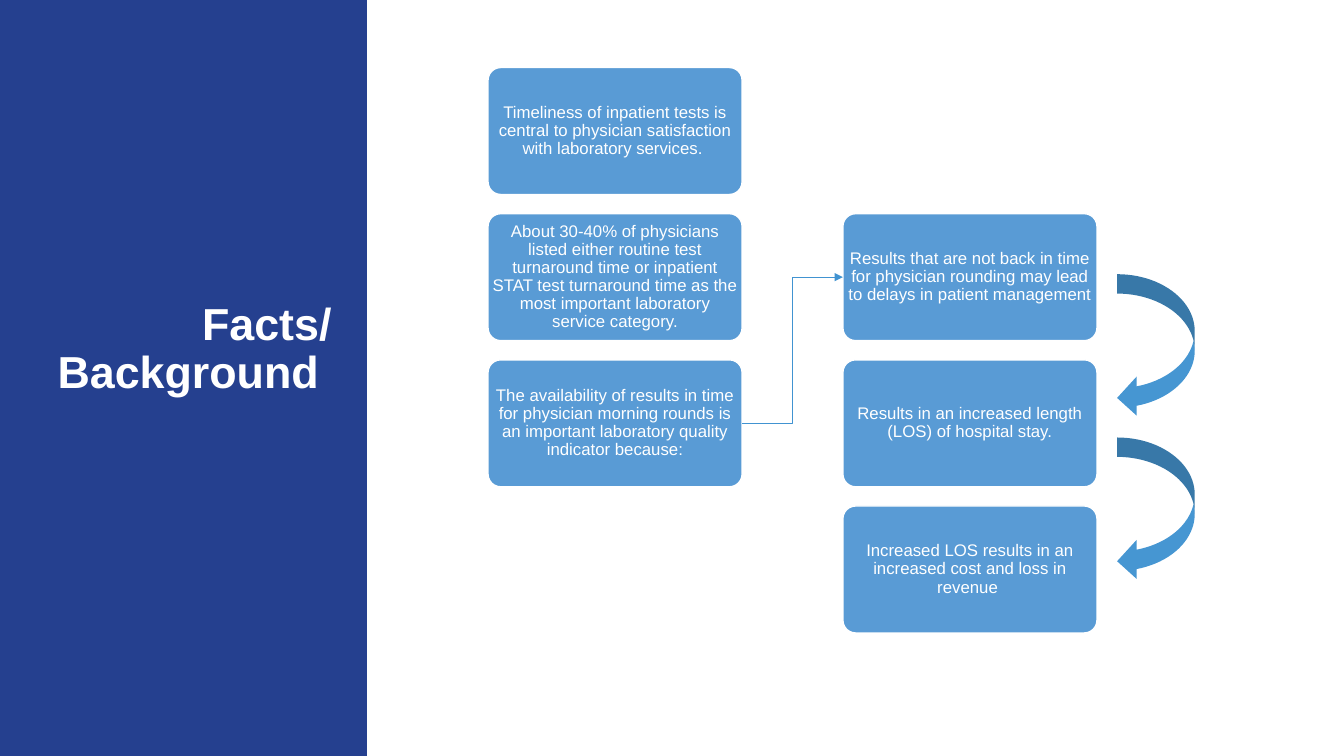
import pptx
import pptx.dml.color
import pptx.enum.shapes
import pptx.enum.text
import pptx.oxml
import pptx.util

SHAPE = pptx.enum.shapes.MSO_SHAPE
ALIGN = pptx.enum.text.PP_ALIGN
ANCHOR = pptx.enum.text.MSO_ANCHOR
Inches = pptx.util.Inches

PANEL, BOX, ARROW, LINK, WHITE = "25408F", "599BD5", "4696D2", "4193D1", "FFFFFF"
GRID_LEFT, GRID_TOP = 4.84, 0.67
COLUMN_STEP, ROW_STEP = 3.52, 1.45
BOX_WIDTH, BOX_HEIGHT = 2.52, 1.26
ARROW_LEFT, ARROW_TOP, ARROW_STEP = 11.08, 2.72, 1.62
RIGHT_SIDE, LEFT_SIDE = 3, 1

# (column, row) of the grid -> wording
FACTS = {
    (0, 0): "Timeliness of inpatient tests is central to physician satisfaction "
            "with laboratory services. ",
    (0, 1): "About 30-40% of physicians listed either routine test turnaround time or "
            "inpatient STAT test turnaround time as the most important laboratory "
            "service category.",
    (0, 2): "The availability of results in time for physician morning rounds is an "
            "important laboratory quality indicator because:",
    (1, 1): "Results that are not back in time for physician rounding may lead to "
            "delays in patient management ",
    (1, 2): "Results in an increased length (LOS) of hospital stay.",
    (1, 3): "Increased LOS results in an increased cost and loss in revenue ",
}


def color(hex_string):
    return pptx.dml.color.RGBColor.from_string(hex_string)


def apply(target, formats):
    """Set every attribute named in formats on target."""
    for name, value in formats.items():
        setattr(target, name, value)


def write(shape, text, size, align, inset, bold=False):
    """Fill a shape with one paragraph of white text, centred vertically."""
    frame = shape.text_frame
    apply(frame, {
        "word_wrap": True,
        "auto_size": pptx.enum.text.MSO_AUTO_SIZE.NONE,
        "vertical_anchor": ANCHOR.MIDDLE,
        "margin_left": Inches(inset[0]),
        "margin_right": Inches(inset[0]),
        "margin_top": Inches(inset[1]),
        "margin_bottom": Inches(inset[1]),
    })
    para = frame.paragraphs[0]
    para.text = text
    apply(para, {"alignment": align, "line_spacing": 0.9, "space_before": 0})
    for span in para.runs:
        apply(span.font, {"name": "Arial", "size": pptx.util.Pt(size), "bold": bold})
        span.font.color.rgb = color(WHITE)


def add_filled(page, kind, left, top, width, height, fill):
    shape = page.shapes.add_shape(kind, *map(Inches, (left, top, width, height)))
    shape.shadow.inherit = False
    shape.fill.solid()
    shape.fill.fore_color.rgb = color(fill)
    shape.line.fill.background()
    return shape


def add_fact(page, column, row, text):
    box = add_filled(page, SHAPE.ROUNDED_RECTANGLE,
                     GRID_LEFT + column * COLUMN_STEP, GRID_TOP + row * ROW_STEP,
                     BOX_WIDTH, BOX_HEIGHT, BOX)
    box.adjustments[0] = 0.1
    box.line.color.rgb = color(WHITE)
    box.line.width = pptx.util.Pt(1)
    write(box, text, 12, ALIGN.CENTER, (0.01, 0.01))
    return box


def add_link(page, cause, effect):
    """Join two boxes with an elbow arrow, right side to left side."""
    link = page.shapes.add_connector(
        pptx.enum.shapes.MSO_CONNECTOR.ELBOW,
        cause.left + cause.width, cause.top + cause.height // 2,
        effect.left, effect.top + effect.height // 2)
    link.begin_connect(cause, RIGHT_SIDE)
    link.end_connect(effect, LEFT_SIDE)
    link.line.color.rgb = color(LINK)
    link.line.width = pptx.util.Pt(0.75)
    namespace = pptx.oxml.ns.nsdecls("a")
    link.line._get_or_add_ln().append(
        pptx.oxml.parse_xml(f'<a:tailEnd {namespace} type="triangle"/>'))
    link._element.spPr.append(pptx.oxml.parse_xml(f"<a:effectLst {namespace}/>"))


def add_title_panel(page, height):
    panel = add_filled(page, SHAPE.RECTANGLE, 0, 0, 3.64, height, PANEL)
    title = page.shapes.title
    title._element.addprevious(panel._element)
    apply(title, {"left": Inches(0.25), "top": Inches(2.75),
                  "width": Inches(3.14), "height": Inches(1.45)})
    write(title, "Facts/\vBackground ", 32, ALIGN.RIGHT, (0.1, 0.05), bold=True)


def main():
    deck = pptx.Presentation()
    apply(deck, {"slide_width": Inches(13.33), "slide_height": Inches(7.5)})
    page = deck.slides.add_slide(deck.slide_layouts.get_by_name("Title Only"))
    add_title_panel(page, 7.5)
    boxes = {cell: add_fact(page, *cell, text) for cell, text in FACTS.items()}
    for step in range(2):
        add_filled(page, SHAPE.CURVED_LEFT_ARROW, ARROW_LEFT,
                   ARROW_TOP + step * ARROW_STEP, 0.77, 1.42, ARROW)
    add_link(page, boxes[0, 2], boxes[1, 1])
    deck.save("out.pptx")


if __name__ == "__main__":
    main()
